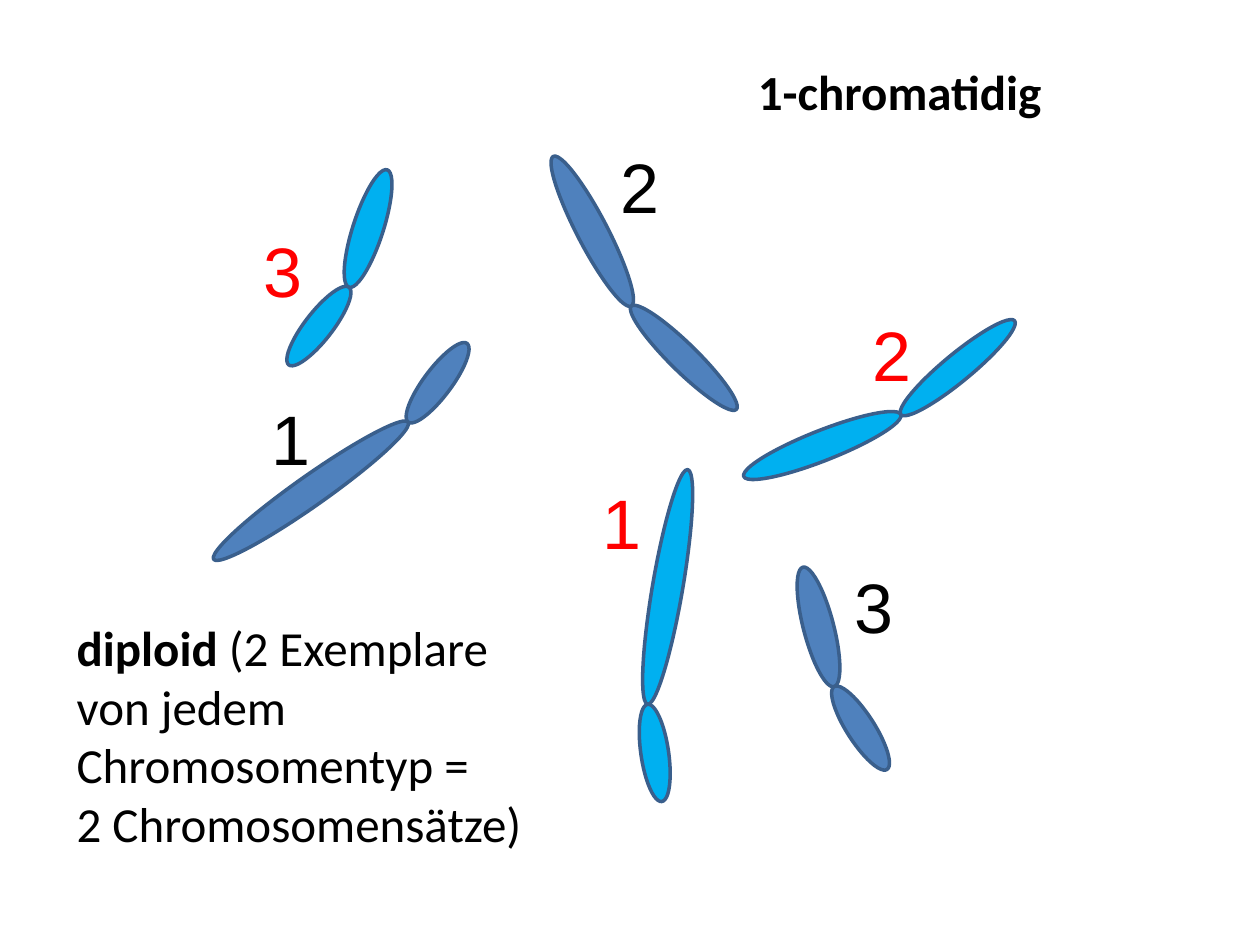
from math import cos, radians, sin

from pptx import Presentation
from pptx import util as u
from pptx.dml import color
from pptx.enum import shapes, text

COLS, ROWS = 100, 75
CELL = u.Inches(0.1)
BLUE, CYAN, EDGE = "4F81BD", "00B0F0", "3A5F8C"
BLACK, RED = "000000", "FF0000"
ARMS = {"1": (18.9, 7.8), "2": (13.4, 11.7), "3": (9.8, 7.8)}
WIDTHS = 2.4, 2.2


def grid(*cells):
    return [round(c * CELL) for c in cells]


def rgb(code):
    return color.RGBColor.from_string(code)


def style(run, **form):
    font = {"name": "Calibri", "size": u.Pt(28), "bold": False} | form
    run.font.color.rgb = rgb(font.pop("tint", BLACK))
    for key, value in font.items():
        setattr(run.font, key, value)


def frame(page, box):
    body = page.shapes.add_textbox(*grid(*box)).text_frame
    form = {"word_wrap": True, "auto_size": text.MSO_AUTO_SIZE.SHAPE_TO_FIT_TEXT}
    for key, value in form.items():
        setattr(body, key, value)
    return body


def write(para, words, **form):
    run = para.add_run()
    run.text = words
    style(run, **form)


def arm(page, x, y, width, size, turn, fill):
    box = grid(x - width / 2, y - size / 2, width, size)
    oval = page.shapes.add_shape(shapes.MSO_SHAPE.OVAL, *box)
    oval.shadow.inherit = False
    oval.rotation = turn
    oval.fill.solid()
    oval.fill.fore_color.rgb = rgb(fill)
    oval.line.color.rgb = rgb(EDGE)
    oval.line.width = u.Pt(2)


def pair(page, x, y, kind, turn, bend, fill):
    sides = zip(ARMS[kind], WIDTHS, (turn, turn + bend), (1, -1))
    for size, width, angle, way in sides:
        reach = way * size / 2
        dx, dy = sin(radians(angle)), -cos(radians(angle))
        arm(page, x + reach * dx, y + reach * dy, width, size, angle % 360, fill)


def cell(page, box):
    left, top = box[:2]
    for x, y, *rest in (
        (22.4, 23.5, "1", 234.8, -18, BLUE),
        (41.4, 45.9, "1", 9.7, -18, CYAN),
        (56.2, 44.5, "3", 345.4, -18, BLUE),
        (17.7, 12.8, "3", 18, 19.8, CYAN),
        (40.1, 14.3, "2", 332.5, -18, BLUE),
        (61.5, 22.9, "2", 248.5, -18, CYAN),
    ):
        pair(page, left + x, top + y, *rest)


def title(page, box):
    para = frame(page, box).paragraphs[0]
    para.alignment = text.PP_ALIGN.CENTER
    write(para, "1-chromatidig", bold=True)


def note(page, box):
    body = frame(page, box)
    para = body.paragraphs[0]
    write(para, "diploid", bold=True)
    write(para, " (2 Exemplare von jedem Chromosomentyp =")
    write(body.add_paragraph(), "2 Chromosomensätze)")


def labels(page, box):
    body = frame(page, box)
    marks = (
        ("2", 37.7, BLACK), ("3", 9.3, RED), ("2", 57.7, RED),
        ("1", 10, BLACK), ("1", 36.2, RED), ("3", 56.2, BLACK),
    )
    for row, (mark, inset, tint) in enumerate(marks):
        para = body.add_paragraph() if row else body.paragraphs[0]
        para.line_spacing = u.Pt(48)
        props = para._p.get_or_add_pPr()
        for key, value in {"marL": grid(inset)[0], "indent": 0}.items():
            props.set(key, str(value))
        write(para, mark, name="Arial", size=u.Pt(40), tint=tint)


def main():
    deck = Presentation()
    deck.slide_width, deck.slide_height = grid(COLS, ROWS)
    page = deck.slides.add_slide(deck.slide_layouts[6])
    cell(page, (10, 10, 75, 55))
    title(page, (47.1, 4.4, 48.6, 5.7))
    note(page, (5.1, 48.5, 37.9, 19.9))
    labels(page, (10.6, 10.9, 68.5, 41.4))
    deck.save("out.pptx")


if __name__ == "__main__":
    main()
